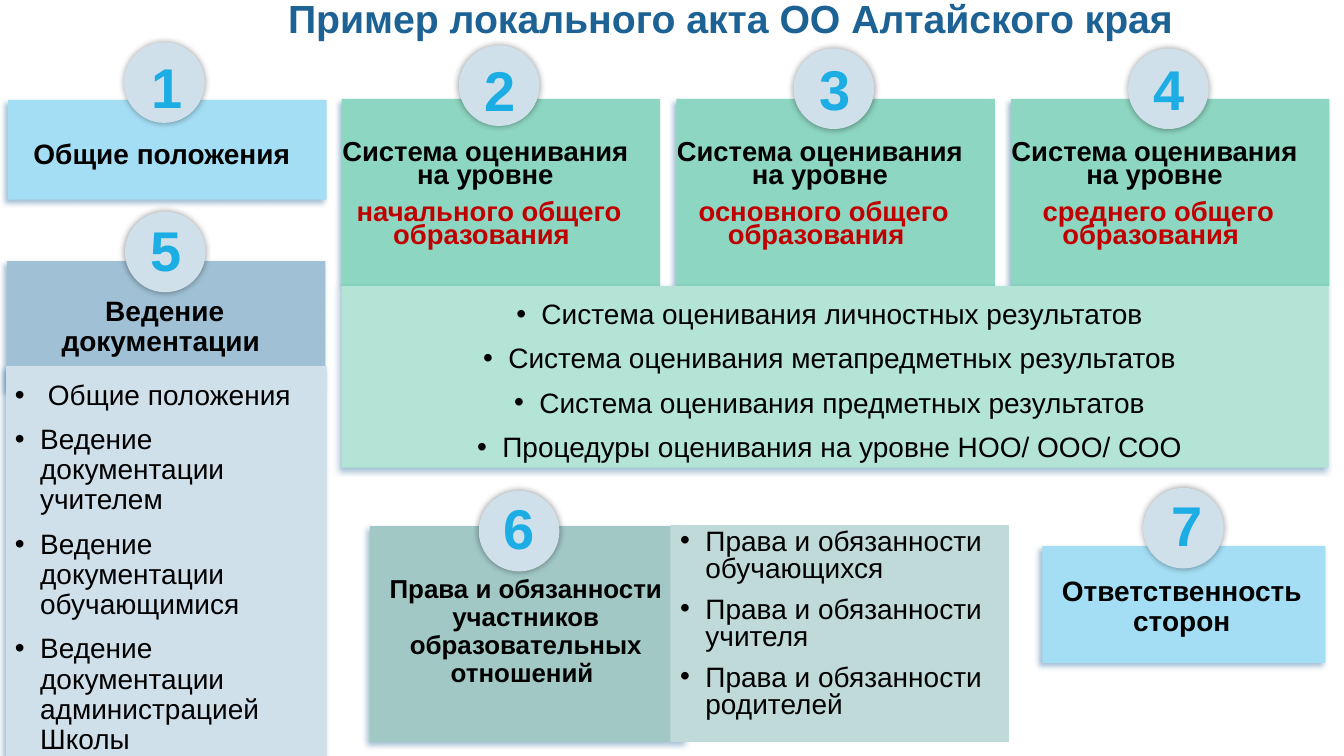
from lxml import etree
from pptx import Presentation
from pptx.dml.color import RGBColor
from pptx.enum.shapes import MSO_SHAPE
from pptx.enum.text import MSO_ANCHOR, PP_ALIGN
from pptx.oxml.ns import qn
from pptx.util import Pt

RECTANGLE, OVAL = MSO_SHAPE.RECTANGLE, MSO_SHAPE.OVAL
LEFT, CENTER = PP_ALIGN.LEFT, PP_ALIGN.CENTER
TOP, MIDDLE = MSO_ANCHOR.TOP, MSO_ANCHOR.MIDDLE

COLORS = {
    "title": "1D6294", "number": "1CADE4", "text": "000000", "accent": "C00000",
    "badge": "CFE0EA", "sky": "A4DEF4", "green": "8DD6C1", "mint": "B3E4D6",
    "steel": "A0C1D5", "pale": "CFE0EA", "teal": "A1C8C5", "pale_teal": "C0DAD9",
    "badge_shadow": "000000",
}
CARD_SHADOW = ("title", 4, 3, 135)
BADGE_SHADOW = ("badge_shadow", 5, 0, 0)
CARD_WIDTH = 227.5
TEXT_WIDTH = 221
BADGE_SIZE = 57.6


class SlideBuilder:
    """Draws cards, badges and texts of one style on a slide."""

    font = "Arial"

    def __init__(self, slide):
        self.slide = slide

    def block(self, kind, left, top, width, height, color, shadow=None):
        shape = self.slide.shapes.add_shape(kind, Pt(left), Pt(top), Pt(width), Pt(height))
        shape.shadow.inherit = False
        shape.fill.solid()
        shape.fill.fore_color.rgb = RGBColor.from_string(COLORS[color])
        shape.line.fill.background()
        if shadow:
            self.add_shadow(shape, *shadow)
        return shape

    def add_shadow(self, shape, color, blur, distance, angle):
        effects = shape._element.spPr.find(qn("a:effectLst"))
        outer = etree.SubElement(effects, qn("a:outerShdw"), blurRad=str(Pt(blur)),
                                 dist=str(Pt(distance)), dir=str(angle * 60000),
                                 rotWithShape="0")
        shade = etree.SubElement(outer, qn("a:srgbClr"), val=COLORS[color])
        etree.SubElement(shade, qn("a:alpha"), val="40000")

    def card(self, left, top, width, height, color):
        return self.block(RECTANGLE, left, top, width, height, color, CARD_SHADOW)

    def badge(self, number, left, top, shift_x, shift_y):
        self.block(OVAL, left, top, BADGE_SIZE, BADGE_SIZE, "badge", BADGE_SHADOW)
        self.text([number], left + shift_x, top + shift_y, BADGE_SIZE, 55.4,
                  size=40, colors=["number"], spacing=1)

    def text(self, lines, left, top, width, height, **style):
        box = self.slide.shapes.add_textbox(Pt(left), Pt(top), Pt(width), Pt(height))
        self.fill_text(box, lines, **style)

    def fill_text(self, shape, lines, size=20, bold=True, colors=("text",), align=CENTER,
                  spacing=0.9, bullets=False, anchor=TOP):
        frame = shape.text_frame
        frame.word_wrap = True
        frame.vertical_anchor = anchor
        frame.text = "\n".join(lines)
        for index, paragraph in enumerate(frame.paragraphs):
            paragraph.alignment = align
            paragraph.line_spacing = spacing
            if index:
                paragraph.space_before = Pt(10)
            if bullets:
                self.add_bullet(paragraph)
            for run in paragraph.runs:
                run.font.name = self.font
                run.font.size = Pt(size)
                run.font.bold = bold
                color = COLORS[colors[index % len(colors)]]
                run.font.color.rgb = RGBColor.from_string(color)

    def add_bullet(self, paragraph):
        properties = paragraph._p.get_or_add_pPr()
        properties.set("marL", str(Pt(18)))
        properties.set("indent", str(-Pt(18)))
        etree.SubElement(properties, qn("a:buFont"), typeface=self.font)
        etree.SubElement(properties, qn("a:buChar"), char="•")


def main():
    presentation = Presentation()
    presentation.slide_width, presentation.slide_height = Pt(960), Pt(540)
    slide = presentation.slides.add_slide(presentation.slide_layouts[6])
    builder = SlideBuilder(slide)

    builder.text(["Пример локального акта ОО Алтайского края"], 198.7, -15.8, 738, 61.9,
                 size=28, colors=["title"], align=LEFT, anchor=MIDDLE)

    builder.card(5.8, 71.3, CARD_WIDTH, 71.3, "sky")
    builder.text(["Общие положения "], 7.9, 96.5, TEXT_WIDTH, 45)
    builder.badge("1", 88.6, 30.2, 2.1, 3.6)

    levels = [("2", "начального", 32.4, 3.6), ("3", "основного", 34.6, 0.7),
              ("4", "среднего", 34.6, 0.7)]
    for index, (number, level, badge_top, shift_y) in enumerate(levels):
        left = 244.1 + 239 * index
        builder.card(left, 70.6, CARD_WIDTH, 133.9, "green")
        builder.text(["Система оценивания на уровне", f" {level} общего образования "],
                     left - 7.9, 98.6, TEXT_WIDTH, 101.5,
                     size=19.6, colors=["text", "accent"], spacing=0.7)
        builder.badge(number, left + 83.7, badge_top, 0.7, shift_y)

    builder.card(244.1, 204.5, 704.9, 129.6, "mint")
    builder.text(["Система оценивания личностных результатов",
                  "Система оценивания метапредметных результатов",
                  "Система оценивания предметных результатов",
                  "Процедуры оценивания на уровне НОО/ ООО/ СОО"],
                 288.7, 211, 607.7, 119.5, bold=False, bullets=True)

    builder.card(5, 186.5, CARD_WIDTH, 92.9, "steel")
    builder.text(["Ведение документации "], 7.2, 208.8, TEXT_WIDTH, 70.6)
    builder.badge("5", 89.3, 151.2, 0.7, -0.7)
    builder.card(4.3, 261.4, 229, 278.6, "pale")
    builder.text([" Общие положения", "Ведение документации учителем",
                  "Ведение документации обучающимися",
                  "Ведение документации администрацией Школы"],
                 3.6, 268.6, CARD_WIDTH, 271.4, bold=False, align=LEFT, bullets=True)

    builder.card(264.2, 375.8, CARD_WIDTH, 154.1, "teal")
    builder.text(["Права и обязанности участников образовательных отношений "],
                 265, 408.2, TEXT_WIDTH, 121, size=18.5)
    builder.badge("6", 342, 350.6, 0, -1.4)
    rights = builder.block(RECTANGLE, 478.8, 375.1, 241.9, 154.8, "pale_teal")
    builder.fill_text(rights, ["Права и обязанности обучающихся",
                               "Права и обязанности учителя",
                               "Права и обязанности родителей"],
                      bold=False, align=LEFT, spacing=0.8, bullets=True)

    builder.card(744.5, 390.2, 202.3, 83.5, "sky")
    builder.text(["Ответственность сторон"], 744.5, 409, 199.4, 60.5)
    builder.badge("7", 816.5, 348.5, 2.9, -1.4)

    presentation.save("out.pptx")


if __name__ == "__main__":
    main()
